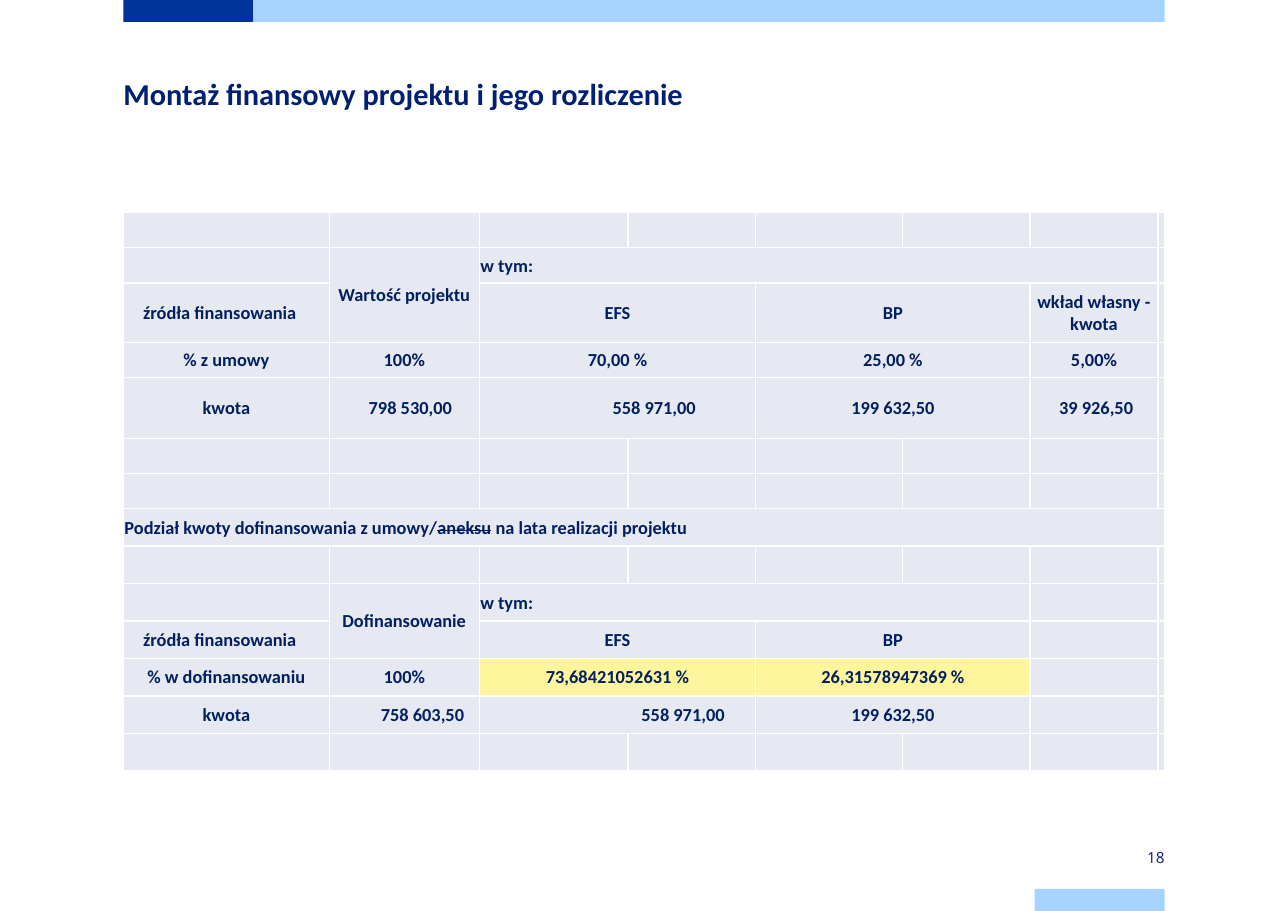
"""Build the slide on the financial structure of the project and its settlement."""
from dataclasses import dataclass

from lxml import etree
from pptx import Presentation
from pptx.dml.color import RGBColor
from pptx.enum.shapes import MSO_SHAPE
from pptx.enum.text import MSO_ANCHOR, MSO_AUTO_SIZE, PP_ALIGN
from pptx.oxml.ns import qn
from pptx.util import Inches, Pt

RECTANGLE = MSO_SHAPE.RECTANGLE
TOP, MIDDLE = MSO_ANCHOR.TOP, MSO_ANCHOR.MIDDLE
LEFT, CENTER, RIGHT = PP_ALIGN.LEFT, PP_ALIGN.CENTER, PP_ALIGN.RIGHT
NO_FIT = MSO_AUTO_SIZE.NONE


@dataclass(frozen=True)
class Theme:
    navy: str = "002073"
    table_ink: str = "002060"
    blue: str = "003399"
    sky: str = "A6D3FF"
    cell: str = "E7E9F2"
    highlight: str = "FFF59D"
    border: str = "FFFFFF"
    main_font: str = "Calibri"
    number_font: str = "Open Sans"
    title_size: float = 19.8
    table_size: float = 12
    number_size: float = 10


THEME = Theme()


def style_font(font, name, size, color, bold):
    font.name, font.size, font.bold = name, Pt(size), bold
    font.color.rgb = RGBColor.from_string(color)


def style_frame(frame, anchor):
    frame.word_wrap = True
    frame.auto_size = NO_FIT
    frame.vertical_anchor = anchor
    frame.margin_left = frame.margin_right = frame.margin_top = frame.margin_bottom = 0


deck = Presentation()
deck.slide_width, deck.slide_height = Inches(11.69), Inches(8.27)
page = deck.slides.add_slide(deck.slide_layouts[5])

BARS = [
    (1.12, 0, 1.18, THEME.blue),
    (2.3, 0, 8.27, THEME.sky),
    (9.39, 8.07, 1.18, THEME.sky),
]
for left, top, width, color in BARS:
    bar = page.shapes.add_shape(RECTANGLE, Inches(left), Inches(top), Inches(width), Inches(0.2))
    bar.shadow.inherit = False
    bar.fill.solid()
    bar.fill.fore_color.rgb = RGBColor.from_string(color)
    bar.line.fill.background()

title = page.shapes.title
title.left, title.top, title.width, title.height = Inches(1.12), Inches(0.51), Inches(9.45), Inches(0.87)
title.text_frame.text = "Montaż finansowy projektu i jego rozliczenie"
style_frame(title.text_frame, TOP)
heading = title.text_frame.paragraphs[0]
heading.alignment = LEFT
heading.line_spacing = Pt(36)
style_font(heading.runs[0].font, THEME.main_font, THEME.title_size, THEME.navy, True)

number_box = page.shapes.add_textbox(Inches(9.39), Inches(7.68), Inches(1.18), Inches(0.2))
number_box.text_frame.text = "18"
style_frame(number_box.text_frame, MIDDLE)
number = number_box.text_frame.paragraphs[0]
number.alignment = RIGHT
style_font(number.runs[0].font, THEME.number_font, THEME.number_size, THEME.navy, False)

COLUMN_WIDTHS = [1.87, 1.36, 1.35, 1.16, 1.33, 1.16, 1.16, 0.06]
ROW_HEIGHTS = [0.32, 0.32, 0.54, 0.32, 0.55, 0.32, 0.32] + [0.34] * 7

frame = page.shapes.add_table(
    len(ROW_HEIGHTS), len(COLUMN_WIDTHS), Inches(1.12), Inches(1.93), Inches(9.45), Inches(5.04))
table = frame.table
table.first_row = table.horz_banding = False
for column, width in zip(table.columns, COLUMN_WIDTHS):
    column.width = Inches(width)
for row, height in zip(table.rows, ROW_HEIGHTS):
    row.height = Inches(height)

for cell in table.iter_cells():
    cell.margin_left = cell.margin_right = cell.margin_top = Inches(0.01)
    cell.margin_bottom = 0
    cell.vertical_anchor = MIDDLE
    properties = cell._tc.get_or_add_tcPr()
    for side in ("a:lnL", "a:lnR", "a:lnT", "a:lnB"):
        edge = etree.SubElement(properties, qn(side), w=str(Pt(1)))
        paint = etree.SubElement(edge, qn("a:solidFill"))
        etree.SubElement(paint, qn("a:srgbClr"), val=THEME.border)
    cell.fill.solid()
    cell.fill.fore_color.rgb = RGBColor.from_string(THEME.cell)

# row, column, rows spanned, columns spanned, text, alignment, left inset, right inset
ENTRIES = [
    (1, 1, 2, 1, "Wartość projektu", CENTER, 0.01, 0.01),
    (1, 2, 1, 5, "w tym:", LEFT, 0.01, 0.01),
    (2, 0, 1, 1, "źródła finansowania", CENTER, 0.01, 0.13),
    (2, 2, 1, 2, "EFS", CENTER, 0.01, 0.01),
    (2, 4, 1, 2, "BP", CENTER, 0.01, 0.01),
    (2, 6, 1, 1, "wkład własny - kwota", CENTER, 0.01, 0.01),
    (3, 0, 1, 1, "% z umowy", CENTER, 0.01, 0.01),
    (3, 1, 1, 1, "100%", CENTER, 0.01, 0.01),
    (3, 2, 1, 2, "70,00 %", CENTER, 0.01, 0.01),
    (3, 4, 1, 2, "25,00 %", CENTER, 0.01, 0.01),
    (3, 6, 1, 1, "5,00%", CENTER, 0.01, 0.01),
    (4, 0, 1, 1, "kwota", CENTER, 0.01, 0.01),
    (4, 1, 1, 1, "798 530,00", CENTER, 0.12, 0.01),
    (4, 2, 1, 2, "558 971,00", LEFT, 1.21, 0.01),
    (4, 4, 1, 2, "199 632,50", CENTER, 0.01, 0.01),
    (4, 6, 1, 1, "39 926,50", CENTER, 0.05, 0.01),
    (7, 0, 1, 8, "Podział kwoty dofinansowania z umowy/", LEFT, 0.01, 0.01),
    (9, 1, 2, 1, "Dofinansowanie", CENTER, 0.01, 0.01),
    (9, 2, 1, 4, "w tym:", LEFT, 0.01, 0.01),
    (10, 0, 1, 1, "źródła finansowania", CENTER, 0.01, 0.13),
    (10, 2, 1, 2, "EFS", CENTER, 0.01, 0.01),
    (10, 4, 1, 2, "BP", CENTER, 0.01, 0.01),
    (11, 0, 1, 1, "% w dofinansowaniu", CENTER, 0.01, 0.01),
    (11, 1, 1, 1, "100%", CENTER, 0.01, 0.01),
    (11, 2, 1, 2, "73,68421052631 %", CENTER, 0.01, 0.01),
    (11, 4, 1, 2, "26,31578947369 %", CENTER, 0.01, 0.01),
    (12, 0, 1, 1, "kwota", CENTER, 0.01, 0.01),
    (12, 1, 1, 1, "758 603,50", CENTER, 0.34, 0.01),
    (12, 2, 1, 2, "558 971,00", CENTER, 1.2, 0.01),
    (12, 4, 1, 2, "199 632,50", CENTER, 0.01, 0.01),
]
for row, column, rows, columns, text, alignment, left_inset, right_inset in ENTRIES:
    cell = table.cell(row, column)
    if rows * columns > 1:
        cell.merge(table.cell(row + rows - 1, column + columns - 1))
    cell.margin_left, cell.margin_right = Inches(left_inset), Inches(right_inset)
    cell.text_frame.text = text
    cell.text_frame.paragraphs[0].alignment = alignment

division = table.cell(7, 0).text_frame.paragraphs[0]
struck = division.add_run()
struck.text = "aneksu"
struck._r.get_or_add_rPr().set("strike", "sngStrike")
division.add_run().text = " na lata realizacji projektu"

for cell in table.iter_cells():
    for span in cell.text_frame.paragraphs[0].runs:
        style_font(span.font, THEME.main_font, THEME.table_size, THEME.table_ink, True)

for column in range(2, 6):
    table.cell(11, column).fill.fore_color.rgb = RGBColor.from_string(THEME.highlight)

deck.save("out.pptx")
